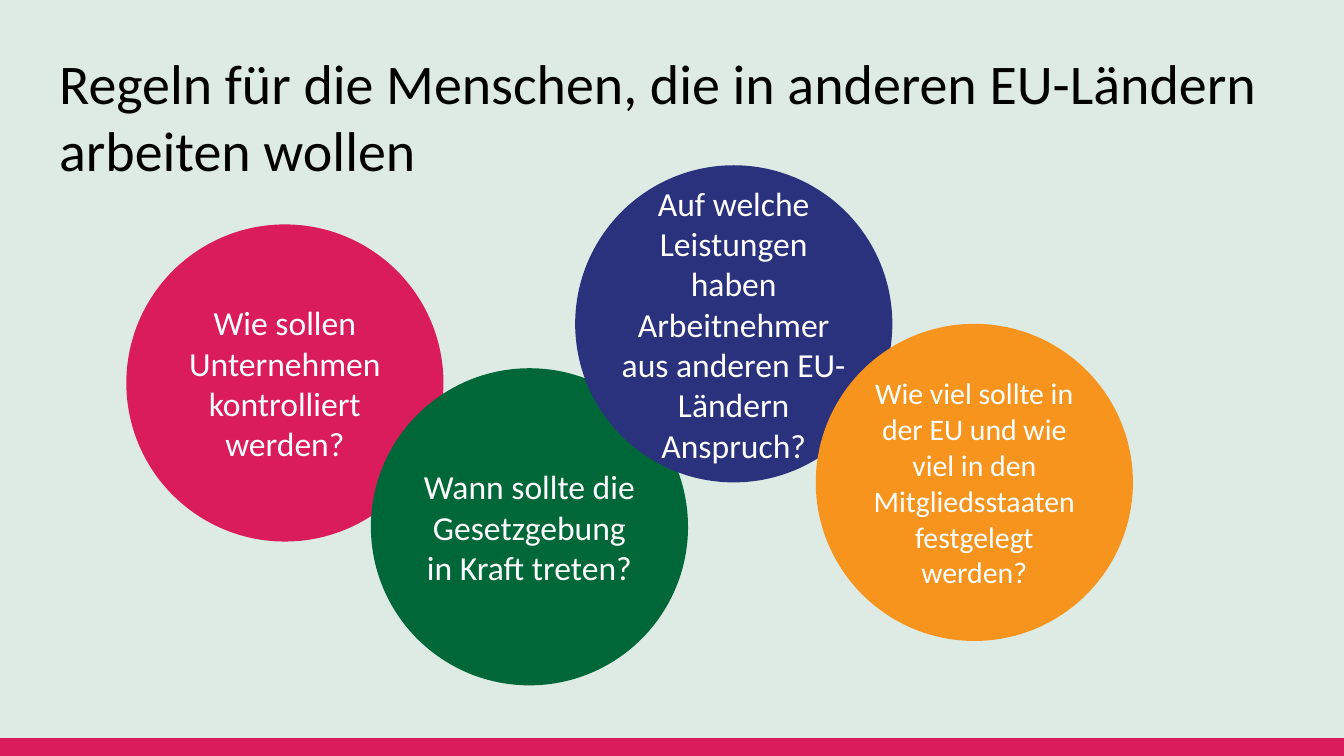
from dataclasses import dataclass

from pptx import Presentation
from pptx.dml.color import RGBColor
from pptx.enum.shapes import MSO_SHAPE
from pptx.enum.text import MSO_ANCHOR, MSO_AUTO_SIZE, PP_ALIGN
from pptx.shapes.autoshape import Shape
from pptx.slide import Slide
from pptx.text.text import TextFrame
from pptx.util import Inches, Pt

FONT = "Calibri"
WIDTH = 10
HEIGHT = WIDTH * 9 / 16
SIZE = 2.36
PINK = "DA1C5C"


@dataclass
class Bubble:
    left: float
    top: float
    fill: str
    text: str
    points: int = 18


BUBBLES = [
    Bubble(0.94, 1.67, PINK, "Wie sollen Unternehmen kontrolliert werden?"),
    Bubble(2.76, 2.74, "006838", "Wann sollte die Gesetzgebung in Kraft treten?"),
    Bubble(4.28, 1.23, "2A317D",
           "Auf welche Leistungen haben Arbeitnehmer aus anderen EU-Ländern Anspruch?"),
    Bubble(6.07, 2.41, "F7941E",
           "Wie viel sollte in der EU und wie viel in den Mitgliedsstaaten festgelegt werden?", 16),
]


def paint(target, color: str) -> None:
    target.solid()
    target.fore_color.rgb = RGBColor.from_string(color)


def write(frame: TextFrame, text: str, points: int, color: str,
          align: PP_ALIGN, anchor: MSO_ANCHOR, side: float) -> None:
    frame.text = text
    frame.word_wrap = True
    frame.auto_size = MSO_AUTO_SIZE.NONE
    frame.vertical_anchor = anchor
    frame.margin_left = frame.margin_right = Inches(side)
    frame.margin_top = frame.margin_bottom = Inches(0.1)
    for para in frame.paragraphs:
        para.alignment = align
        for run in para.runs:
            run.font.name = FONT
            run.font.size = Pt(points)
            paint(run.font.fill, color)


def add_shape(slide: Slide, kind: MSO_SHAPE, left: float, top: float,
              width: float, height: float, color: str) -> Shape:
    shape = slide.shapes.add_shape(kind, Inches(left), Inches(top), Inches(width), Inches(height))
    shape.shadow.inherit = False
    paint(shape.fill, color)
    shape.line.fill.background()
    return shape


def add_title(slide: Slide) -> None:
    title = slide.shapes.title
    title.left, title.top = Inches(0.34), Inches(0.26)
    title.width, title.height = Inches(9.32), Inches(0.67)
    write(title.text_frame, "Regeln für die Menschen, die in anderen EU-Ländern arbeiten wollen",
          30, "000000", PP_ALIGN.LEFT, MSO_ANCHOR.TOP, 0.1)


def add_bar(slide: Slide) -> None:
    bar = add_shape(slide, MSO_SHAPE.RECTANGLE, 0, 5.5, WIDTH, 0.12, PINK)
    paint(bar.line.fill, PINK)
    bar.line.width = Pt(0.75)


def add_bubble(slide: Slide, item: Bubble) -> None:
    shape = add_shape(slide, MSO_SHAPE.OVAL, item.left, item.top, SIZE, SIZE, item.fill)
    write(shape.text_frame, item.text, item.points, "FFFFFF",
          PP_ALIGN.CENTER, MSO_ANCHOR.MIDDLE, 0)


def main() -> None:
    deck = Presentation()
    deck.slide_width, deck.slide_height = Inches(WIDTH), Inches(HEIGHT)
    slide = deck.slides.add_slide(deck.slide_layouts[5])
    paint(slide.background.fill, "DEEBE5")
    add_title(slide)
    add_bar(slide)
    for item in BUBBLES:
        add_bubble(slide, item)
    deck.save("out.pptx")


if __name__ == "__main__":
    main()
